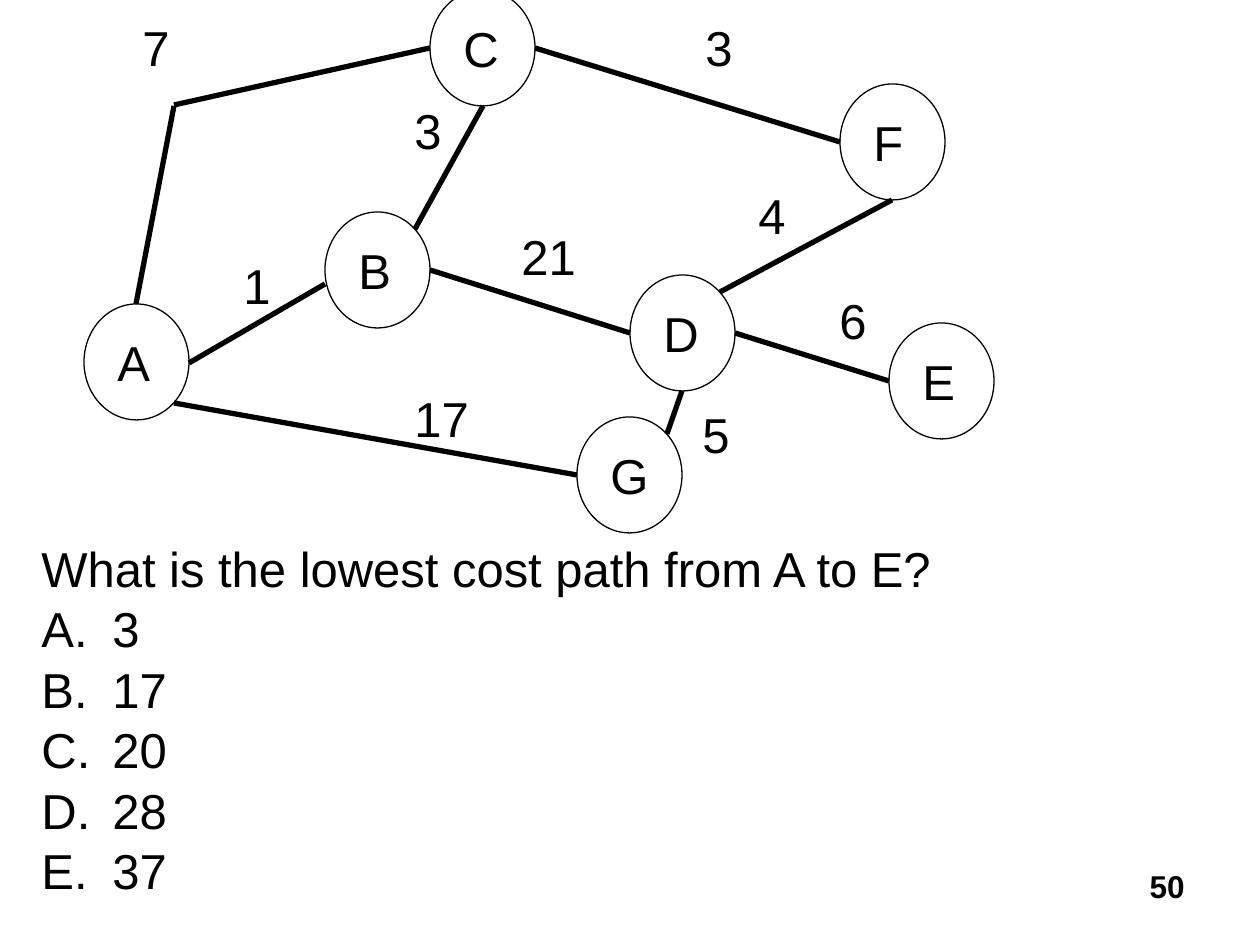
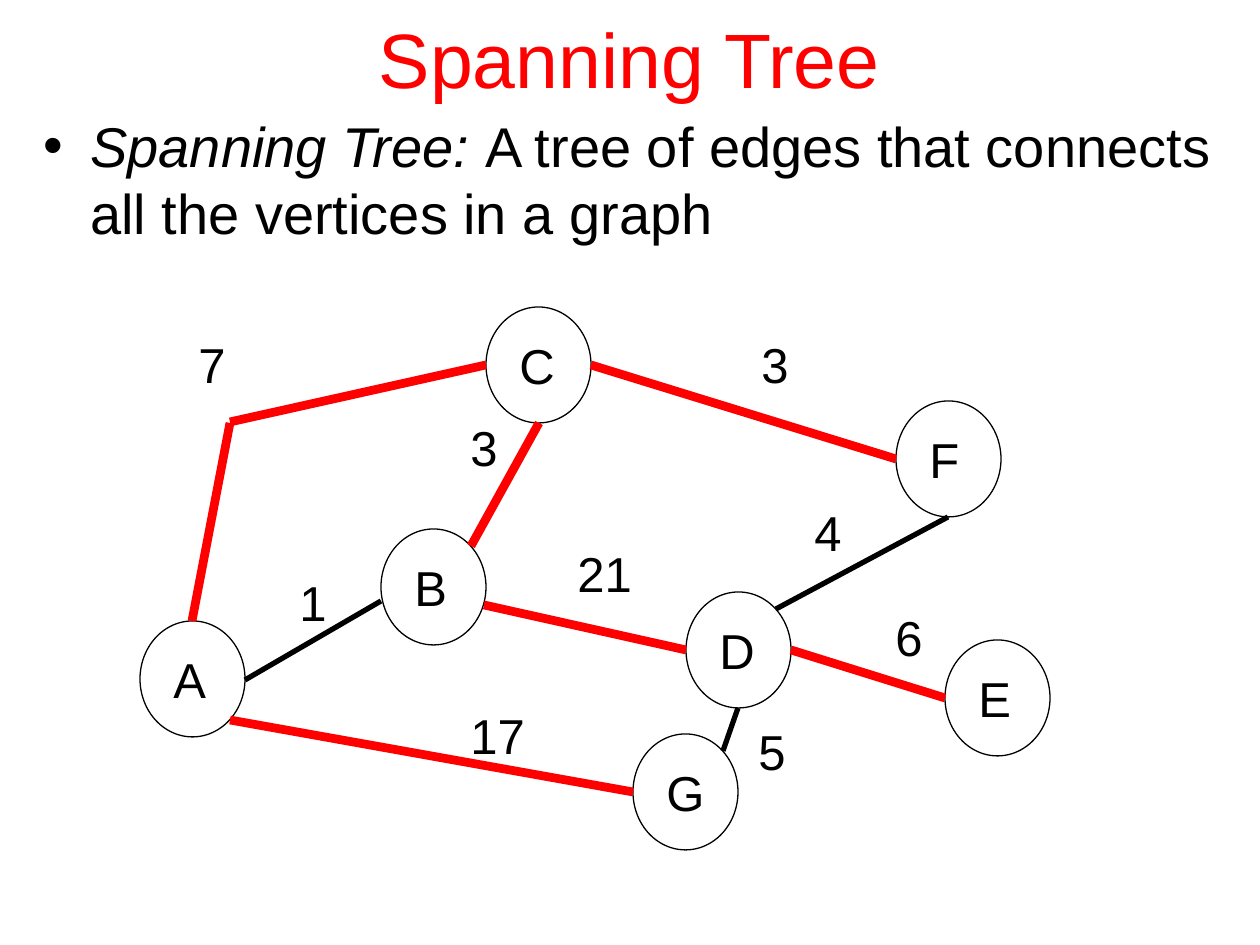
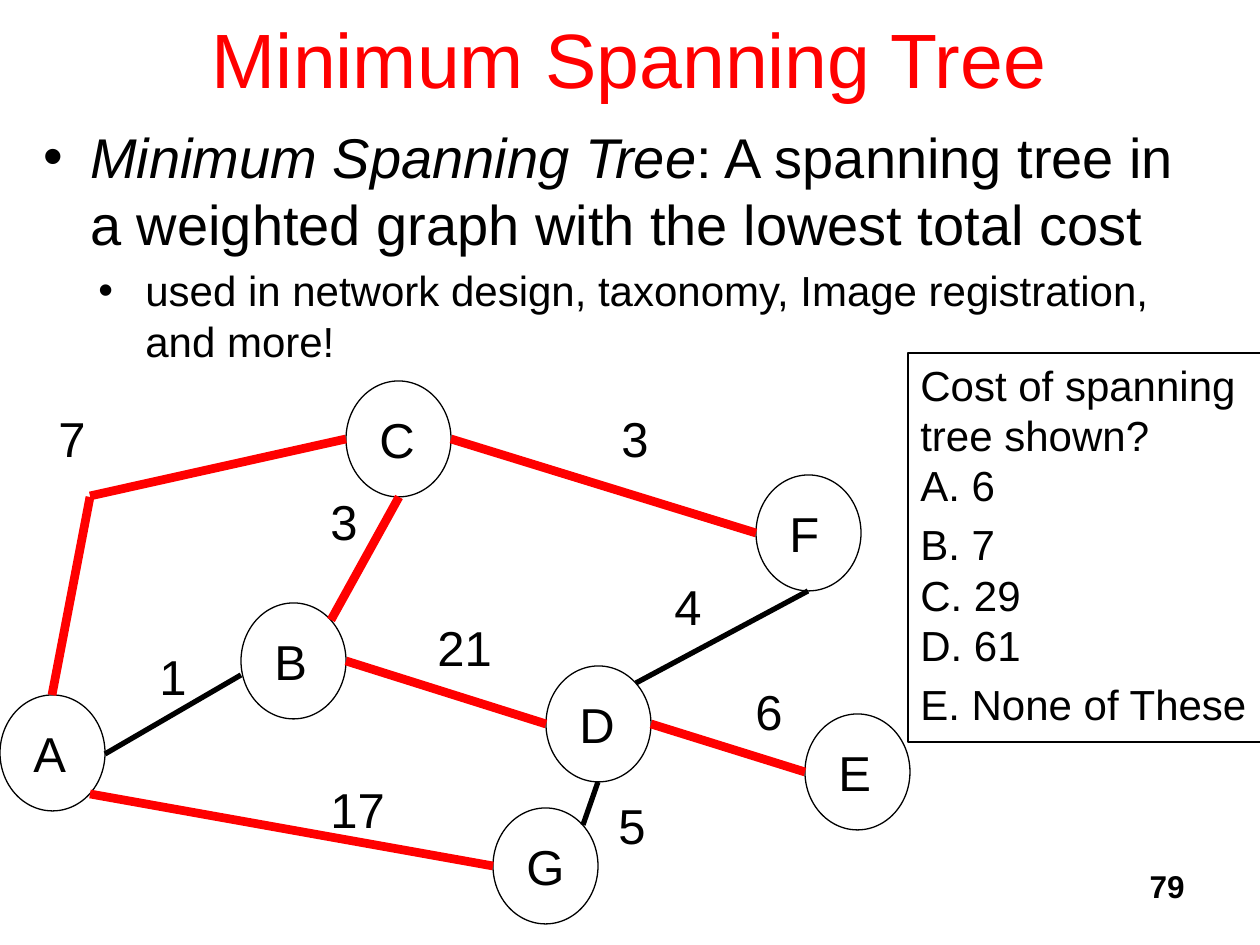
"""Build three slides on weighted graphs and spanning trees."""
from lxml.etree import SubElement
from pptx import Presentation
from pptx.dml.color import RGBColor
from pptx.enum.shapes import MSO_CONNECTOR, MSO_SHAPE
from pptx.enum.text import MSO_ANCHOR, PP_ALIGN
from pptx.oxml.ns import qn
from pptx.util import Pt

PX = 914400 // 126
BLACK = RGBColor(0, 0, 0)
RED = RGBColor(255, 0, 0)
FONT = "Arial"

NODE_WIDTH, NODE_HEIGHT = 105, 116
NODES = {
    "A": (0, 314), "B": (241, 222), "C": (346, 0), "F": (756, 94),
    "D": (546, 285), "E": (805, 333), "G": (493, 427),
}
TREE_EDGES = [
    ((331, 239), (399, 116)), ((451, 58), (756, 152)), ((651, 343), (805, 391)),
    ((90, 413), (493, 485)), ((52, 314), (90, 116)), ((90, 115), (346, 58)),
]
OTHER_EDGES = [
    ((105, 373), (241, 294)), ((808, 210), (636, 302)), ((598, 401), (583, 444)),
]
WEIGHTS = [
    ("1", 147, 259), ("3", 318, 104), ("3", 609, 21), ("21", 425, 230), ("4", 662, 189),
    ("6", 743, 294), ("17", 318, 392), ("5", 606, 408), ("7", 46, 21),
]
SLIDES = [
    {"origin": (84, -10), "b_exit": (346, 280), "tree": (BLACK, 3), "number": "50"},
    {"origin": (140, 307), "b_exit": (344, 298), "tree": (RED, 5), "title": "Spanning Tree",
     "body_top": 105, "definition": ("Spanning Tree: ",
                                     "A tree of edges that connects all the vertices in a graph")},
    {"origin": (0, 381), "b_exit": (346, 280), "tree": (RED, 5), "title": "Minimum Spanning Tree",
     "body_top": 116, "definition": ("Minimum Spanning Tree",
                                     ": A spanning tree in a weighted graph with the lowest total cost"),
     "uses": "used in network design, taxonomy, Image registration, and more!", "number": "79"},
]


def add_box(slide, left, top, width, height, **frame_format):
    box = slide.shapes.add_textbox(left * PX, top * PX, width * PX, height * PX)
    for name, value in {"word_wrap": True, **frame_format}.items():
        setattr(box.text_frame, name, value)
    return box


def write(frame, *texts, size=28, color=BLACK, bold=False, before=0, align=PP_ALIGN.LEFT,
          indent=0, hanging=0, bullet=None):
    paragraph = frame.add_paragraph() if frame.text else frame.paragraphs[0]
    paragraph.text = texts[0]
    for text in texts[1:]:
        paragraph.add_run().text = text
    for name, value in {"alignment": align, "space_before": Pt(before)}.items():
        setattr(paragraph, name, value)
    for run in paragraph.runs:
        for name, value in {"name": FONT, "size": Pt(size), "bold": bold}.items():
            setattr(run.font, name, value)
        run.font.color.rgb = color
    paragraph.runs[0].font.italic = len(texts) > 1
    if bullet:
        properties = paragraph._p.get_or_add_pPr()
        properties.set("marL", str(indent * PX))
        properties.set("indent", str(-hanging * PX))
        tag, key, value = bullet
        SubElement(properties, qn("a:buFont"), typeface=FONT)
        SubElement(properties, qn(tag)).set(key, value)


DOT = ("a:buChar", "char", "•")
LETTER = ("a:buAutoNum", "type", "alphaUcPeriod")

deck = Presentation()
deck.slide_width, deck.slide_height = 1260 * PX, 945 * PX

for content in SLIDES:
    slide = deck.slides.add_slide(deck.slide_layouts[6])
    origin_x, origin_y = content["origin"]

    if "title" in content:
        title = add_box(slide, 94, -21, 1071, 158, vertical_anchor=MSO_ANCHOR.MIDDLE)
        write(title.text_frame, content["title"], size=44, color=RED, align=PP_ALIGN.CENTER)
        body = add_box(slide, 31, content["body_top"], 1197, 756).text_frame
        write(body, *content["definition"], size=32, before=6.4, indent=47, hanging=47, bullet=DOT)
        if "uses" in content:
            write(body, content["uses"], size=24, before=4.8, indent=102, hanging=47, bullet=DOT)

    if "number" in content:
        number = add_box(slide, 935, 861, 262, 63)
        write(number.text_frame, content["number"], size=18, bold=True, align=PP_ALIGN.RIGHT)

    for letter, (x, y) in NODES.items():
        node = slide.shapes.add_shape(MSO_SHAPE.OVAL, (origin_x + x) * PX, (origin_y + y) * PX,
                                      NODE_WIDTH * PX, NODE_HEIGHT * PX)
        node.shadow.inherit = False
        node.fill.background()
        node.line.color.rgb, node.line.width = BLACK, Pt(0.75)
        for name, value in {"margin_left": 18 * PX, "margin_right": 0,
                            "vertical_anchor": MSO_ANCHOR.MIDDLE}.items():
            setattr(node.text_frame, name, value)
        write(node.text_frame, letter, before=5.6)

    tree = TREE_EDGES + [(content["b_exit"], (546, 343))]
    for edges, (color, width) in ((OTHER_EDGES, (BLACK, 3)), (tree, content["tree"])):
        for (x1, y1), (x2, y2) in edges:
            edge = slide.shapes.add_connector(
                MSO_CONNECTOR.STRAIGHT, (origin_x + x1) * PX, (origin_y + y1) * PX,
                (origin_x + x2) * PX, (origin_y + y2) * PX)
            edge.line.color.rgb, edge.line.width = color, Pt(width)
            SubElement(edge._element.spPr, qn("a:effectLst"))

    for weight, x, y in WEIGHTS:
        label = add_box(slide, origin_x + x, origin_y + y, 25 + 28 * len(weight), 72, word_wrap=False)
        write(label.text_frame, weight, before=5.6)

path_slide, _, cost_slide = deck.slides

path_quiz = add_box(path_slide, 29, 532, 1002, 378).text_frame
write(path_quiz, "What is the lowest cost path from A to E?", before=1)
for answer in ("3", "17", "20", "28", "37"):
    write(path_quiz, answer, before=1, indent=71, hanging=71, bullet=LETTER)

cost_quiz = add_box(cost_slide, 908, 353, 354, 389, word_wrap=False)
cost_quiz.line.color.rgb, cost_quiz.line.width = BLACK, Pt(0.75)
for lines in ("Cost of spanning\vtree shown?\vA. 6", "B. 7\vC. 29\vD. 61", "E. None of These"):
    write(cost_quiz.text_frame, lines, size=24, before=4.8)

deck.save("out.pptx")
